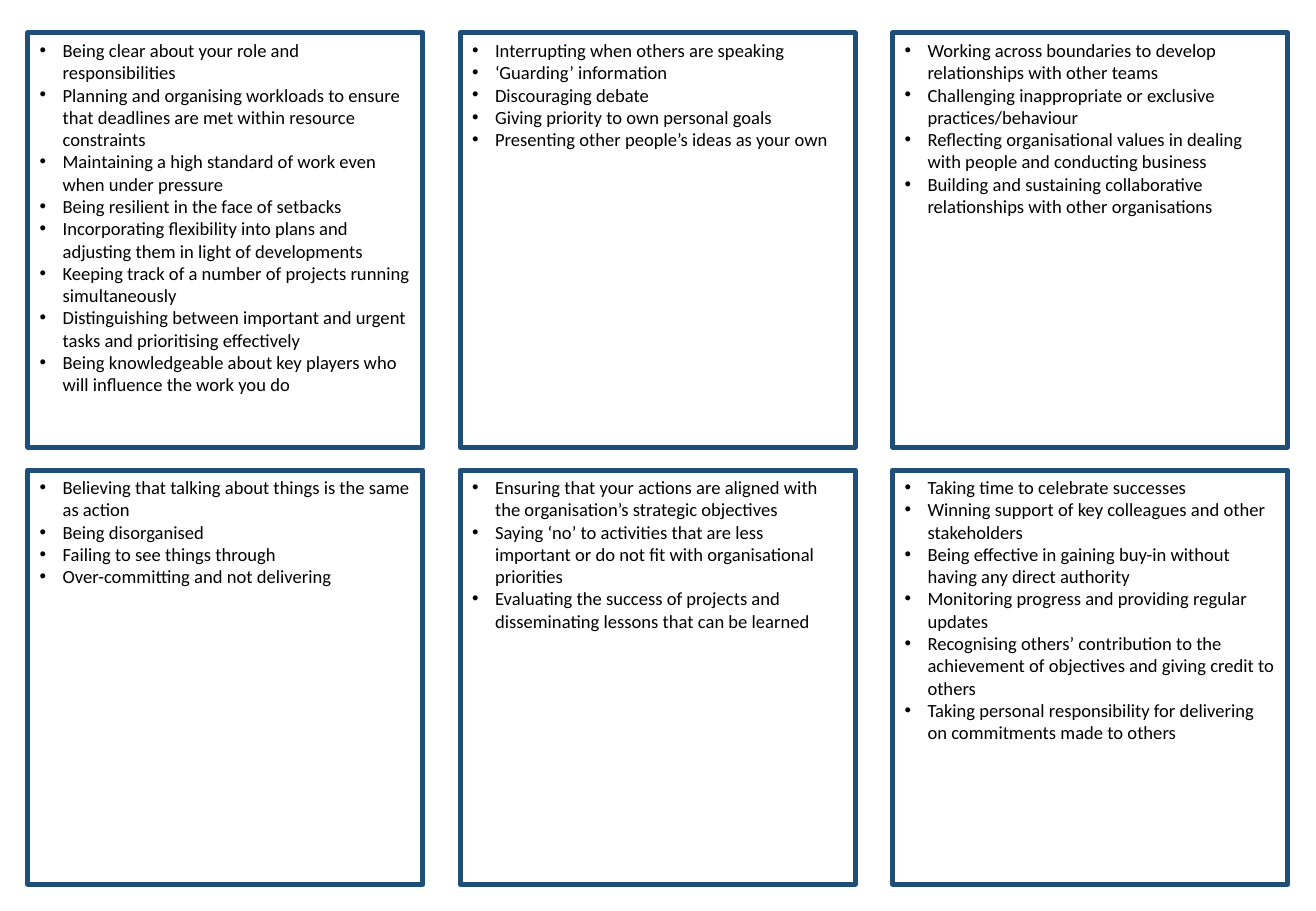
import dataclasses

import pptx
import pptx.dml.color
import pptx.enum.shapes
import pptx.enum.text
import pptx.oxml
import pptx.util
from pptx.util import Cm


@dataclasses.dataclass(frozen=True)
class Theme:
    border: str = "1F4E79"
    text: str = "000000"
    font: str = "Calibri"
    body_size: float = 11
    border_width: float = 3


THEME = Theme()
COLUMNS = 3
LEFT, TOP = 0.58, 0.69
CARD_WIDTH, CARD_HEIGHT = 8.26, 8.66
COLUMN_STEP, ROW_STEP = 9.04, 9.14
BULLET_INDENT = 0.48

CARDS = [
    (7.77, [
        "Being clear about your role and responsibilities",
        "Planning and organising workloads to ensure that deadlines are met within resource constraints",
        "Maintaining a high standard of work even when under pressure",
        "Being resilient in the face of setbacks",
        "Incorporating flexibility into plans and adjusting them in light of developments",
        "Keeping track of a number of projects running simultaneously",
        "Distinguishing between important and urgent tasks and prioritising effectively",
        "Being knowledgeable about key players who will influence the work you do",
    ]),
    (2.62, [
        "Interrupting when others are speaking",
        "‘Guarding’ information",
        "Discouraging debate",
        "Giving priority to own personal goals",
        "Presenting other people’s ideas as your own",
    ]),
    (4.5, [
        "Working across boundaries to develop relationships with other teams",
        "Challenging inappropriate or exclusive practices/behaviour",
        "Reflecting organisational values in dealing with people and conducting business",
        "Building and sustaining collaborative relationships with other organisations",
    ]),
    (2.62, [
        "Believing that talking about things is the same as action",
        "Being disorganised",
        "Failing to see things through",
        "Over-committing and not delivering",
    ]),
    (3.56, [
        "Ensuring that your actions are aligned with the organisation’s strategic objectives",
        "Saying ‘no’ to activities that are less important or do not fit with organisational priorities",
        "Evaluating the success of projects and disseminating lessons that can be learned",
    ]),
    (5.89, [
        "Taking time to celebrate successes",
        "Winning support of key colleagues and other stakeholders",
        "Being effective in gaining buy-in without having any direct authority",
        "Monitoring progress and providing regular updates",
        "Recognising others’ contribution to the achievement of objectives and giving credit to others",
        "Taking personal responsibility for delivering on commitments made to others",
    ]),
]


def color(value):
    return pptx.dml.color.RGBColor.from_string(value)


def add_frame(slide, left, top):
    shape = slide.shapes.add_shape(
        pptx.enum.shapes.MSO_SHAPE.RECTANGLE,
        Cm(left), Cm(top), Cm(CARD_WIDTH), Cm(CARD_HEIGHT))
    shape.shadow.inherit = False
    shape.fill.background()
    shape.line.color.rgb = color(THEME.border)
    shape.line.width = pptx.util.Pt(THEME.border_width)


def write_text(paragraph, text, font=THEME.font, size=THEME.body_size, fill=THEME.text):
    run = paragraph.add_run()
    run.text = text
    run.font.name = font
    run.font.size = pptx.util.Pt(size)
    run.font.color.rgb = color(fill)


def add_bullet(paragraph):
    properties = paragraph._p.get_or_add_pPr()
    properties.set("marL", str(Cm(BULLET_INDENT)))
    properties.set("indent", str(-Cm(BULLET_INDENT)))
    namespace = 'xmlns:a="http://schemas.openxmlformats.org/drawingml/2006/main"'
    for element in ('buFont {} typeface="Arial"', 'buChar {} char="•"'):
        properties.append(pptx.oxml.parse_xml(f"<a:{element.format(namespace)}/>"))


def add_bullet_list(slide, items, left, top, height):
    shape = slide.shapes.add_textbox(Cm(left), Cm(top), Cm(CARD_WIDTH), Cm(height))
    frame = shape.text_frame
    frame.word_wrap = True
    frame.auto_size = pptx.enum.text.MSO_AUTO_SIZE.SHAPE_TO_FIT_TEXT
    for index, item in enumerate(items):
        paragraph = frame.add_paragraph() if index else frame.paragraphs[0]
        add_bullet(paragraph)
        write_text(paragraph, item)


def main():
    presentation = pptx.Presentation()
    presentation.slide_width = Cm(27.51)
    presentation.slide_height = Cm(19.05)
    slide = presentation.slides.add_slide(presentation.slide_layouts[6])
    for index, (text_height, items) in enumerate(CARDS):
        row, column = divmod(index, COLUMNS)
        left = LEFT + column * COLUMN_STEP
        top = TOP + row * ROW_STEP
        add_frame(slide, left, top)
        add_bullet_list(slide, items, left, top, text_height)
    presentation.save("out.pptx")


if __name__ == "__main__":
    main()
